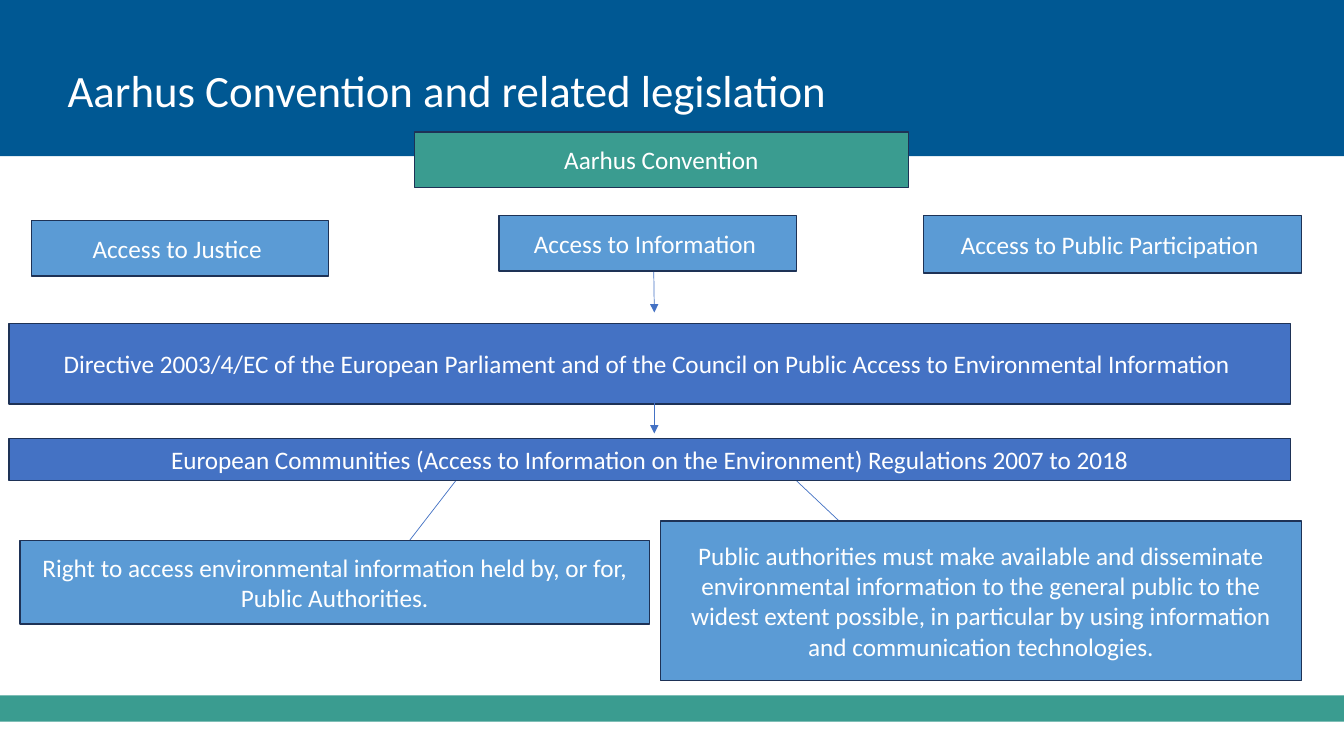
from dataclasses import dataclass

from lxml.etree import SubElement
from pptx import Presentation
from pptx.dml.color import RGBColor
from pptx.enum.shapes import MSO_CONNECTOR as Connector, MSO_SHAPE as Preset
from pptx.enum.text import MSO_ANCHOR as Anchor, PP_ALIGN as Align
from pptx.oxml.ns import qn
from pptx.shapes.autoshape import Shape
from pptx.slide import Slide
from pptx.text.text import TextFrame
from pptx.util import Inches, Pt

COLOURS = {
    "banner": "005893",
    "teal": "3A9C90",
    "law": "4472C4",
    "pillar": "5B9BD5",
    "outline": "1E3256",
    "white": "FFFFFF",
}
FONT = "Calibri"


@dataclass(frozen=True)
class Box:
    text: str
    left: float
    top: float
    width: float
    height: float
    fill: str


@dataclass(frozen=True)
class Arrow:
    start: tuple[float, float]
    end: tuple[float, float]


BANDS = [
    Box("", 0, -0.02, 13.33, 1.57, "banner"),
    Box("", 0, 6.9, 13.33, 0.26, "teal"),
]
BOXES = [
    Box("Aarhus Convention", 4.11, 1.31, 4.9, 0.55, "teal"),
    Box("European Communities (Access to Information on the Environment) "
        "Regulations 2007 to 2018", 0.09, 4.35, 12.71, 0.42, "law"),
    Box("Directive 2003/4/EC of the European Parliament and of the Council on "
        "Public Access to Environmental Information ",
        0.09, 3.21, 12.71, 0.8, "law"),
    Box("Access to Justice ", 0.31, 2.19, 2.95, 0.55, "pillar"),
    Box("Access to Public Participation ", 9.16, 2.14, 3.75, 0.57, "pillar"),
    Box("Access to Information ", 4.95, 2.14, 2.95, 0.55, "pillar"),
    Box("Right to access environmental information held by, or for, "
        "Public Authorities.", 0.2, 5.36, 6.24, 0.83, "pillar"),
    Box("Public authorities must make available and disseminate environmental "
        "information to the general public to the widest extent possible, in "
        "particular by using information and communication technologies.",
        6.55, 5.17, 6.36, 1.58, "pillar"),
]
ARROWS_BEHIND = [
    Arrow((6.48, 2.39), (6.49, 3.1)),
    Arrow((4.52, 4.77), (3.94, 5.52)),
    Arrow((7.9, 4.77), (9.16, 5.96)),
]
ARROW_IN_FRONT = Arrow((6.49, 3.71), (6.49, 4.3))


def colour(name: str) -> RGBColor:
    return RGBColor.from_string(COLOURS[name])


def write_text(frame: TextFrame, text: str, *, size: float = 18,
               align: Align = Align.CENTER, spacing: float = 1.0) -> None:
    frame.word_wrap = True
    frame.vertical_anchor = Anchor.MIDDLE
    para = frame.paragraphs[0]
    para.alignment = align
    para.line_spacing = spacing
    span = para.add_run()
    span.text = text
    span.font.name = FONT
    span.font.size = Pt(size)
    span.font.color.rgb = colour("white")


def draw_rectangle(page: Slide, box: Box) -> Shape:
    shape = page.shapes.add_shape(
        Preset.RECTANGLE, Inches(box.left), Inches(box.top),
        Inches(box.width), Inches(box.height))
    shape.shadow.inherit = False
    shape.fill.solid()
    shape.fill.fore_color.rgb = colour(box.fill)
    shape.line.fill.background()
    return shape


def draw_box(page: Slide, box: Box) -> None:
    shape = draw_rectangle(page, box)
    shape.line.color.rgb = colour("outline")
    shape.line.width = Pt(1)
    write_text(shape.text_frame, box.text)


def draw_arrow(page: Slide, arrow: Arrow) -> None:
    ends = [Inches(value) for value in (*arrow.start, *arrow.end)]
    connector = page.shapes.add_connector(Connector.STRAIGHT, *ends)
    connector.line.color.rgb = colour("law")
    connector.line.width = Pt(0.5)
    properties = connector._element.spPr
    SubElement(properties.find(qn("a:ln")), qn("a:tailEnd"), type="triangle")
    SubElement(properties, qn("a:effectLst"))


def place_title(page: Slide, text: str) -> None:
    title = page.shapes.title
    title.left, title.top = Inches(0.67), Inches(0.3)
    title.width, title.height = Inches(12), Inches(1.25)
    frame = title.text_frame
    frame.margin_left = frame.margin_right = 0
    frame.margin_top = frame.margin_bottom = 0
    write_text(frame, text, size=32, align=Align.LEFT, spacing=0.9)
    # Bring the title in front of the banner
    page.shapes._spTree.append(title._element)


def main() -> None:
    deck = Presentation()
    deck.slide_width, deck.slide_height = Inches(13.33), Inches(7.5)
    page = deck.slides.add_slide(deck.slide_layouts.get_by_name("Title Only"))

    # Banner and footer band
    for band in BANDS:
        draw_rectangle(page, band)

    # Arrows partly covered by the boxes
    for arrow in ARROWS_BEHIND:
        draw_arrow(page, arrow)

    # Title and legislation boxes
    place_title(page, "Aarhus Convention and related legislation")
    for box in BOXES:
        draw_box(page, box)

    # Arrow from the directive to the regulations
    draw_arrow(page, ARROW_IN_FRONT)

    deck.save("out.pptx")


if __name__ == "__main__":
    main()
